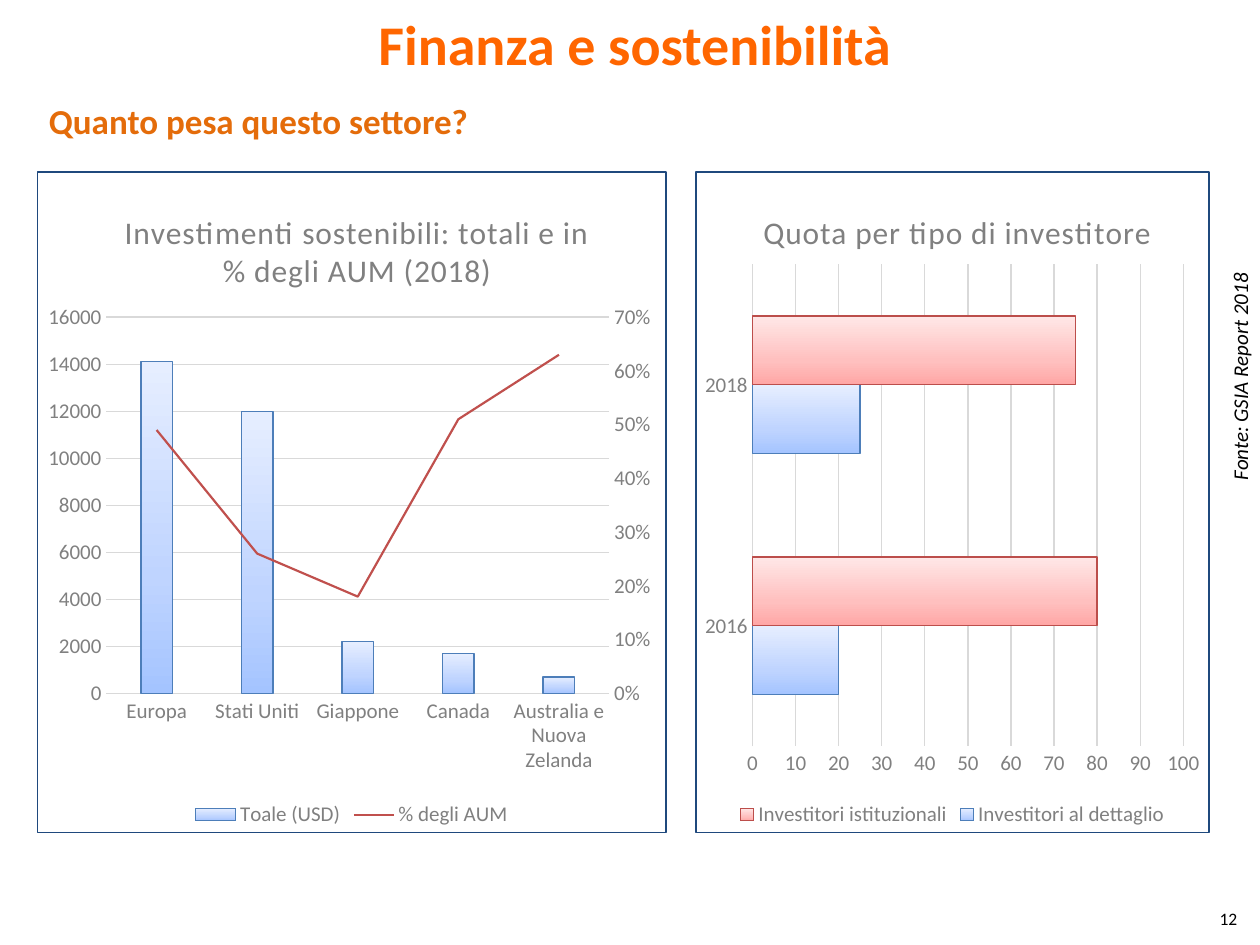
from pptx import Presentation
from pptx.chart.data import CategoryChartData
from pptx.dml.color import RGBColor
from pptx.enum import chart as ch, text
from pptx.oxml import parse_xml
from pptx.oxml.ns import nsdecls, qn
from pptx.util import Pt

NS = nsdecls("c", "a")
GREY, GRID, NAVY = "808080", "D9D9D9", "1F497D"
BLUES = (("A4C4FF", "BFD4FF", "E6EEFF"), "4D7EB9")
REDS = (("FFA6A5", "FFC0BF", "FFE7E7"), "BC4E4B")


def rgb(color):
    return RGBColor.from_string(color)


def set_layout(parent, index, inner="", **place):
    """Give a chart part a fixed place, in fractions of the chart."""
    for old in parent.findall(qn("c:layout")):
        parent.remove(old)
    modes = "".join(f'<c:{k}Mode val="edge"/>' for k in "xy")
    values = "".join(f'<c:{k} val="{v}"/>' for k, v in place.items())
    parent.insert(index, parse_xml(
        f"<c:layout {NS}><c:manualLayout>{inner}{modes}{values}"
        "</c:manualLayout></c:layout>"))


deck = Presentation()
deck.slide_width, deck.slide_height = Pt(720), Pt(540)
slide = deck.slides.add_slide(deck.slide_layouts[6])

# Heading, question, source and page number
left, middle = text.PP_ALIGN.LEFT, text.PP_ALIGN.CENTER
captions = [
    # words, left, top, width, height, size, colour, bold, italic, align, turn
    ("12", 689.8, 515.5, 28, 19.4, 10, "000000", False, False, left, 0),
    ("Finanza e sostenibilità", 5.8, 2.9, 714.2, 43.9, 32, "FF6600",
     True, False, middle, 0),
    ("Quanto pesa questo settore?", 20.9, 53.3, 523.4, 31.7, 20, "E46C0A",
     True, False, left, 0),
    ("Fonte: GSIA Report 2018", 638.6, 200.2, 140.4, 22.3, 12, "000000",
     False, True, left, 270),
]
for words, x, y, w, h, size, color, bold, italic, align, turn in captions:
    caption = slide.shapes.add_textbox(Pt(x), Pt(y), Pt(w), Pt(h))
    caption.rotation = turn
    frame = caption.text_frame
    frame.word_wrap = words != "12"
    if align == middle:
        frame.vertical_anchor = text.MSO_ANCHOR.MIDDLE
    frame.text = words
    line = frame.paragraphs[0]
    line.alignment = align
    font = line.runs[0].font
    font.name, font.size, font.bold, font.italic = "Calibri", Pt(size), bold, italic
    font.color.rgb = rgb(color)

# Data of the two charts
investors = CategoryChartData()
investors.categories = ["2016", "2018"]
investors.add_series("Investitori al dettaglio", [20, 25])
investors.add_series("Investitori istituzionali", [80, 75])

regions = CategoryChartData()
regions.categories = ["Europa", "Stati Uniti", "Giappone", "Canada",
                      "Australia e Nuova Zelanda"]
regions.add_series("Toale (USD)", [14100, 12000, 2200, 1700, 700])
regions.add_series("% degli AUM", [0.49, 0.26, 0.18, 0.51, 0.63], "0%")

panels = [
    # data, type, left, width, title, title place, plot place, gap, overlap
    (investors, ch.XL_CHART_TYPE.BAR_CLUSTERED, 397.4, 293.8,
     "Quota per tipo di investitore", dict(x=0.12, y=0.05),
     dict(x=0.11, y=0.14, w=0.84, h=0.73), 150, 0),
    (regions, ch.XL_CHART_TYPE.COLUMN_CLUSTERED, 20.9, 360,
     "Investimenti sostenibili: totali e in % degli AUM (2018)",
     dict(x=0.13, y=0.05),
     dict(x=0.11, y=0.22, w=0.8, h=0.57), 219, -27),
]
charts = []
for data, kind, x, w, title, title_at, plot_at, gap, overlap in panels:
    chart = slide.shapes.add_chart(kind, Pt(x), Pt(97.9), Pt(w), Pt(378), data).chart
    charts.append(chart)
    chart.font.name, chart.font.size = "Calibri", Pt(12)
    chart.font.color.rgb = rgb(GREY)

    # Title
    chart.has_title = True
    chart.chart_title.text_frame.text = title
    heading = chart.chart_title.text_frame.paragraphs[0].runs[0]
    heading.font.name, heading.font.size = "Calibri", Pt(18)
    heading.font.bold = False
    heading.font.color.rgb = rgb(GREY)
    heading.font._element.set("spc", "50")
    set_layout(chart._chartSpace.chart.find(qn("c:title")), 1, **title_at)
    set_layout(chart._chartSpace.chart.plotArea, 0,
               '<c:layoutTarget val="inner"/>', **plot_at)

    # Legend
    chart.has_legend = True
    chart.legend.position = ch.XL_LEGEND_POSITION.BOTTOM
    chart.legend.include_in_layout = False

    # Axes
    for axis in (chart.category_axis, chart.value_axis):
        axis.major_tick_mark = axis.minor_tick_mark = ch.XL_TICK_MARK.NONE
        axis.format.line.width = Pt(0.75)
    chart.category_axis.format.line.color.rgb = rgb(GRID)
    chart.value_axis.format.line.fill.background()
    chart.value_axis.minimum_scale = 0
    chart.value_axis.has_major_gridlines = True
    grid = chart.value_axis.major_gridlines.format.line
    grid.color.rgb, grid.width = rgb(GRID), Pt(0.75)

    # Bars with a vertical gradient
    bars = chart.plots[0]
    bars.vary_by_categories = False
    bars.gap_width, bars.overlap = gap, overlap
    for series, (shades, edge) in zip(bars.series, (BLUES, REDS)):
        series.format.line.color.rgb = rgb(edge)
        series.format.line.width = Pt(0.75)
        stops = "".join(
            f'<a:gs pos="{pos}"><a:srgbClr val="{shade}"/></a:gs>'
            for pos, shade in zip((0, 35000, 100000), shades))
        series._element.find(qn("c:spPr")).insert(0, parse_xml(
            f'<a:gradFill {NS} rotWithShape="1"><a:gsLst>{stops}</a:gsLst>'
            '<a:lin ang="16200000" scaled="0"/></a:gradFill>'))

    # Frame
    chart._chartSpace.chart.addnext(parse_xml(
        f'<c:spPr {NS}><a:noFill/><a:ln w="9525"><a:solidFill>'
        f'<a:srgbClr val="{NAVY}"/></a:solidFill></a:ln></c:spPr>'))

investor_chart, region_chart = charts
investor_chart.value_axis.maximum_scale = 100
region_chart.value_axis.maximum_scale = 16000

# The AUM share becomes a line on a second axis
share = region_chart.plots[0].series[1]
share.format.line.color.rgb = rgb("C0504D")
share.format.line.width = Pt(1.25)
share_xml = share._element
for bar_only in list(share_xml.iter(qn("a:gradFill"), qn("c:invertIfNegative"))):
    bar_only.getparent().remove(bar_only)
share_xml.find(qn("c:spPr")).addnext(parse_xml(
    f'<c:marker {NS}><c:symbol val="none"/></c:marker>'))
share_xml.append(parse_xml(f'<c:smooth {NS} val="0"/>'))

share_plot = parse_xml(
    f'<c:lineChart {NS}><c:grouping val="standard"/><c:varyColors val="0"/>'
    '<c:marker val="1"/><c:axId val="5001"/><c:axId val="5002"/></c:lineChart>')
share_plot.insert(2, share_xml)
plot_area = region_chart._chartSpace.chart.plotArea
plot_area.find(qn("c:barChart")).addnext(share_plot)

hidden_axis = parse_xml(
    f'<c:catAx {NS}><c:axId val="5001"/><c:scaling><c:orientation val="minMax"/>'
    '</c:scaling><c:delete val="1"/><c:axPos val="b"/><c:crossAx val="5002"/>'
    '<c:crosses val="autoZero"/></c:catAx>')
share_axis = parse_xml(
    f'<c:valAx {NS}><c:axId val="5002"/><c:scaling><c:orientation val="minMax"/>'
    '<c:max val="0.7"/><c:min val="0"/></c:scaling><c:delete val="0"/>'
    '<c:axPos val="r"/><c:numFmt formatCode="0%" sourceLinked="0"/>'
    '<c:majorTickMark val="none"/><c:minorTickMark val="none"/>'
    '<c:tickLblPos val="nextTo"/><c:spPr><a:ln><a:noFill/></a:ln></c:spPr>'
    '<c:crossAx val="5001"/><c:crosses val="max"/><c:majorUnit val="0.1"/></c:valAx>')
last_axis = plot_area.findall(qn("c:valAx"))[-1]
last_axis.addnext(share_axis)
last_axis.addnext(hidden_axis)

deck.save("out.pptx")
